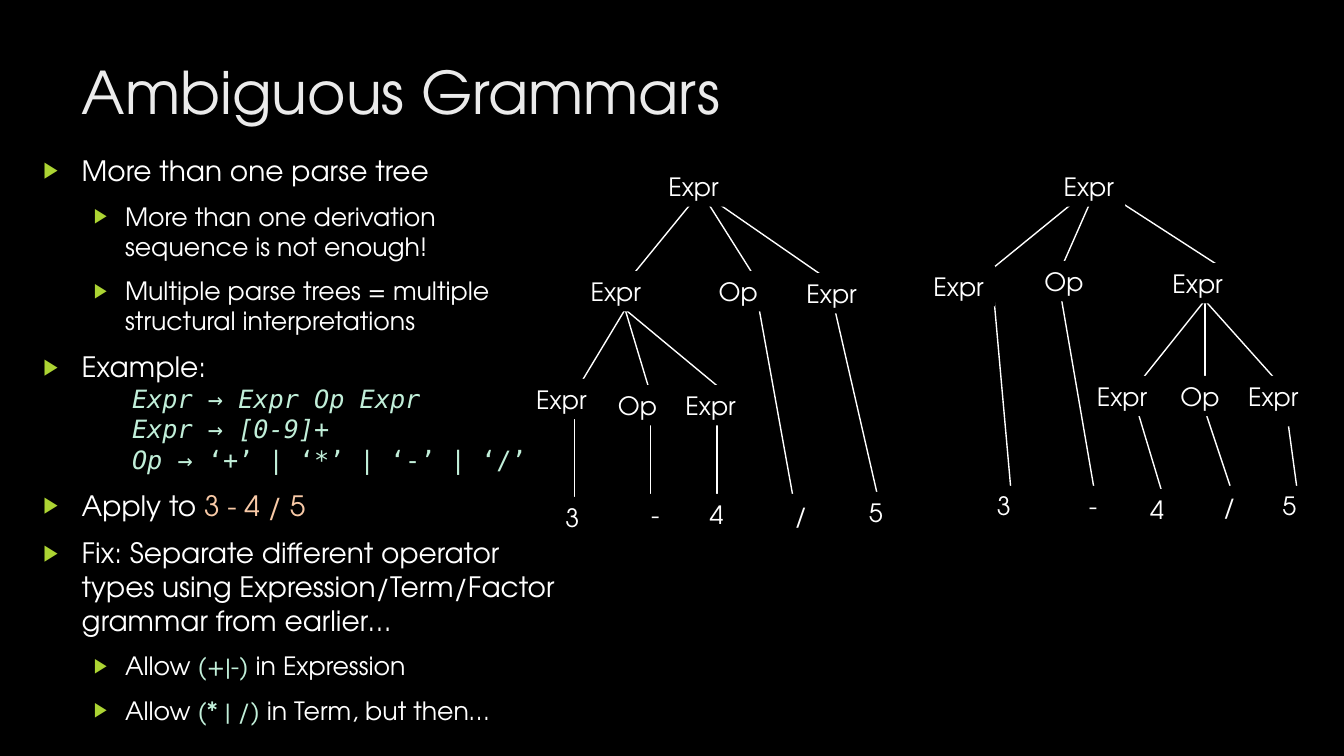
from lxml.etree import SubElement
from pptx import Presentation
from pptx.dml.color import RGBColor
from pptx.enum.shapes import MSO_CONNECTOR, MSO_SHAPE
from pptx.enum.text import MSO_ANCHOR, MSO_AUTO_SIZE, PP_ALIGN
from pptx.oxml.ns import qn
from pptx.util import Pt

PX = 9144  # 100 px to the inch
SANS, MONO = "TeX Gyre Adventor", "DejaVu Sans Mono"
BLACK, WHITE, TITLE_GREY = "000000", "FFFFFF", "EBEBEB"
LIME, MINT, PEACH = "ACD433", "C1EFD9", "F9CAA7"

# level: (left margin px, first-line indent px, size pt, font, space before pt)
LEVELS = [(38, -38, 20, SANS, 10), (81, -31, 18, SANS, 10), (88, 0, 18, MONO, 0)]

# (level, runs); a run is (text, colour, italic)
POINTS = [
    (0, [("More than one parse tree", WHITE, False)]),
    (1, [("More than one derivation sequence is not enough!", WHITE, False)]),
    (1, [("Multiple parse trees = multiple structural interpretations", WHITE, False)]),
    (0, [("Example:", WHITE, False)]),
    (2, [("Expr", MINT, True), (" → ", MINT, False), ("Expr Op Expr", MINT, True)]),
    (2, [("Expr ", MINT, True), ("→", MINT, False), (" [0-9]+", MINT, True)]),
    (2, [("Op", MINT, True), (" → ‘+’ | ‘*’ | ‘-’ | ‘/’", MINT, False)]),
    (0, [("Apply to ", WHITE, False), ("3 - 4 / 5", PEACH, False)]),
    (0, [("Fix: Separate different operator types using "
          "Expression/Term/Factor grammar from earlier…", WHITE, False)]),
    (1, [("Allow ", WHITE, False), ("(+|-)", MINT, False),
         (" in Expression", WHITE, False)]),
    (1, [("Allow ", WHITE, False), ("(* | /) ", MINT, False),
         ("in Term, but then…", WHITE, False)]),
]

NODE_SIZES = {"Expr": (71, 40), "Op": (59, 40), "-": (28, 43), "/": (26, 43)}
DIGIT_SIZE = (34, 40)

# Branches (x1, y1, x2, y2) and nodes (label, left, top), within each tree's box
LEFT_TREE = {
    "branches": [
        (175, 30, 100, 122), (175, 30, 308, 122), (175, 30, 233, 122),
        (100, 147, 50, 230), (100, 147, 200, 230), (100, 147, 125, 230),
        (50, 255, 50, 338), (125, 255, 125, 338), (191, 255, 191, 338),
        (233, 147, 266, 330), (308, 147, 350, 330),
    ],
    "nodes": [
        ("Expr", 133, 5),
        ("Expr", 56, 109), ("Op", 183, 109), ("Expr", 270, 111),
        ("Expr", 2, 216), ("Op", 83, 222), ("Expr", 150, 222),
        ("3", 31, 333), ("-", 116, 330), ("4", 174, 330), ("/", 258, 330), ("5", 332, 328),
    ],
}
RIGHT_TREE = {
    "branches": [
        (168, 30, 76, 105), (185, 30, 301, 105), (176, 30, 143, 105),
        (285, 138, 218, 222), (285, 138, 360, 222), (285, 138, 285, 222),
        (76, 138, 93, 330), (143, 138, 176, 330),
        (218, 247, 243, 330), (285, 247, 310, 322), (368, 263, 376, 322),
    ],
    "nodes": [
        ("Expr", 135, 5),
        ("Expr", 6, 104), ("Op", 116, 99), ("Expr", 243, 101),
        ("Expr", 168, 213), ("Op", 251, 213), ("Expr", 318, 213),
        ("3", 69, 322), ("-", 160, 322), ("4", 221, 325), ("/", 293, 322), ("5", 352, 322),
    ],
}


def px(*lengths):
    return [length * PX for length in lengths]


def color(hex_string):
    return RGBColor.from_string(hex_string)


def set_font(font, size, name, hex_string=None):
    font.size, font.name = Pt(size), name
    if hex_string:
        font.color.rgb = color(hex_string)


def place(shape, box):
    shape.left, shape.top, shape.width, shape.height = px(*box)


def format_list_level(para, level):
    """Set indents and the bullet of a list paragraph."""
    margin, indent = LEVELS[level][:2]
    para.level = level
    properties = para._p.get_or_add_pPr()
    properties.set("marL", str(margin * PX))
    properties.set("indent", str(indent * PX))
    if indent == 0:
        SubElement(properties, qn("a:buNone"))
        return
    bullet_color = SubElement(properties, qn("a:buClr"))
    SubElement(bullet_color, qn("a:srgbClr"), val=LIME)
    SubElement(properties, qn("a:buSzPct"), val="80000")
    SubElement(properties, qn("a:buChar"), char="▶")


def add_title(slide, box, text):
    title = slide.shapes.title
    place(title, box)
    frame = title.text_frame
    frame.text = text
    frame.vertical_anchor = MSO_ANCHOR.TOP
    frame.auto_size = MSO_AUTO_SIZE.NONE
    para = frame.paragraphs[0]
    para.alignment = PP_ALIGN.LEFT
    set_font(para.font, 42, SANS, TITLE_GREY)


def add_points(slide, box, points):
    body = slide.placeholders[1]
    place(body, box)
    frame = body.text_frame
    frame.vertical_anchor = MSO_ANCHOR.TOP
    frame.auto_size = MSO_AUTO_SIZE.NONE
    for index, (level, runs) in enumerate(points):
        para = frame.add_paragraph() if index else frame.paragraphs[0]
        size, name, space = LEVELS[level][2:]
        format_list_level(para, level)
        para.space_before = Pt(space if index else 0)
        set_font(para.font, size, name)
        for text, hex_string, italic in runs:
            span = para.add_run()
            span.text = text
            span.font.color.rgb = color(hex_string)
            span.font.italic = italic


def add_branch(slide, start_x, start_y, end_x, end_y):
    branch = slide.shapes.add_connector(
        MSO_CONNECTOR.STRAIGHT, *px(start_x, start_y, end_x, end_y))
    branch.line.color.rgb = color(WHITE)
    branch.line.width = Pt(1)
    SubElement(branch._element.spPr, qn("a:effectLst"))


def add_node(slide, label, left, top):
    width, height = NODE_SIZES.get(label, DIGIT_SIZE)
    node = slide.shapes.add_shape(MSO_SHAPE.RECTANGLE, *px(left, top, width, height))
    node.shadow.inherit = False
    node.fill.solid()
    node.fill.fore_color.rgb = color(BLACK)
    node.line.fill.background()
    frame = node.text_frame
    frame.word_wrap = False
    frame.auto_size = MSO_AUTO_SIZE.SHAPE_TO_FIT_TEXT
    frame.vertical_anchor = MSO_ANCHOR.TOP
    frame.text = label
    para = frame.paragraphs[0]
    para.alignment = PP_ALIGN.LEFT
    set_font(para.font, 18, SANS, WHITE)


def add_parse_tree(slide, origin, tree):
    """Draw the branches first, so that the nodes cover their ends."""
    left, top = origin
    for start_x, start_y, end_x, end_y in tree["branches"]:
        add_branch(slide, left + start_x, top + start_y, left + end_x, top + end_y)
    for label, node_left, node_top in tree["nodes"]:
        add_node(slide, label, left + node_left, top + node_top)


def main():
    deck = Presentation()
    deck.slide_width, deck.slide_height = px(1333, 750)
    slide = deck.slides.add_slide(deck.slide_layouts[1])
    slide.background.fill.solid()
    slide.background.fill.fore_color.rgb = color(BLACK)
    add_title(slide, (71, 50, 1029, 73), "Ambiguous Grammars")
    add_points(slide, (33, 147, 538, 594), POINTS)
    add_parse_tree(slide, (520, 160), LEFT_TREE)
    add_parse_tree(slide, (910, 160), RIGHT_TREE)
    deck.save("out.pptx")


if __name__ == "__main__":
    main()
